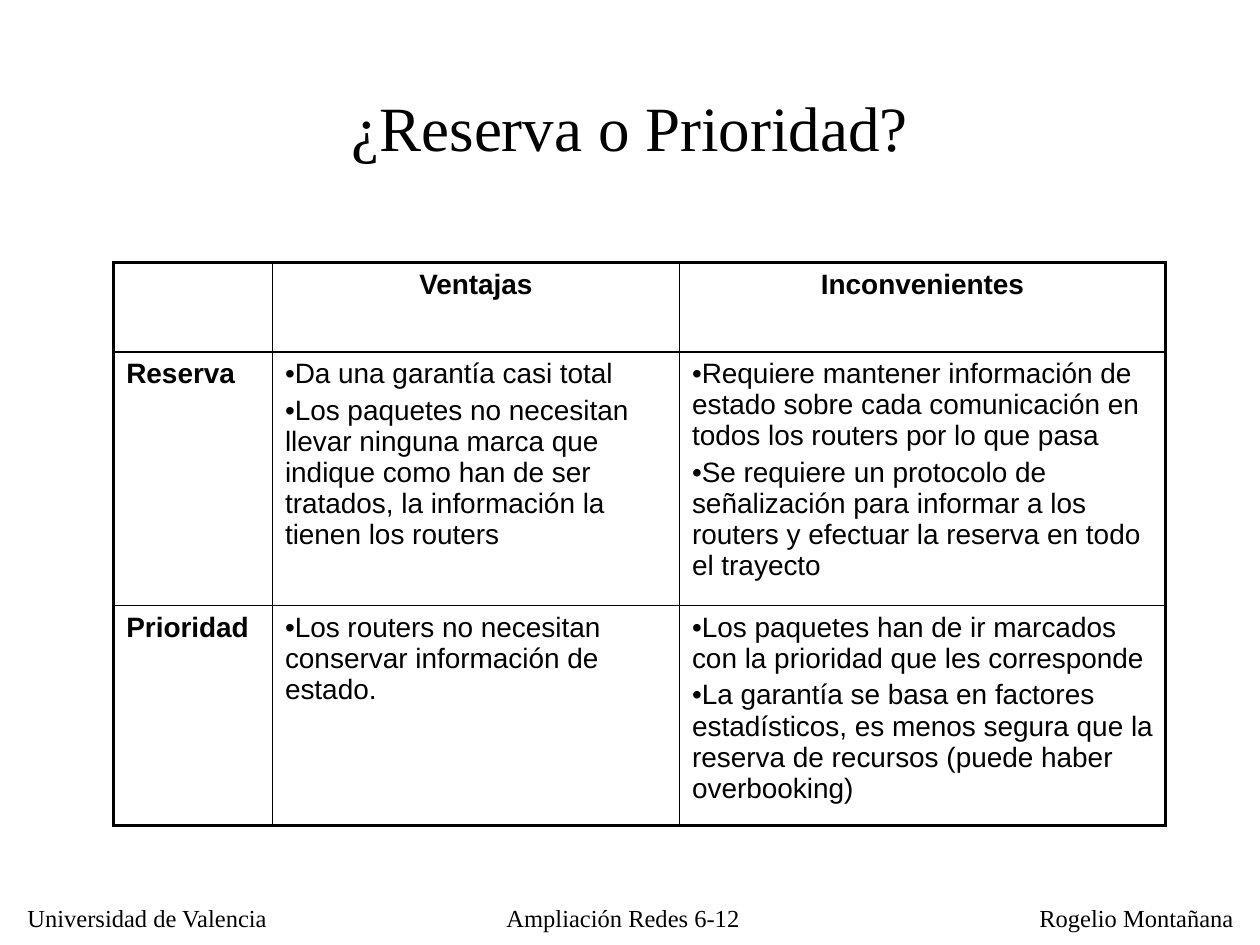
from dataclasses import dataclass

from lxml import etree
from pptx import Presentation
from pptx import util as u
from pptx.dml.color import RGBColor
from pptx.enum import text as t
from pptx.oxml import ns

COLORS = {"ink": "000000", "paper": "FFFFFF"}
SERIF, SANS = "Times New Roman", "Arial"
THICK, THIN = 2.25, 1
COLUMN_WIDTHS = (90.7, 232.6, 277.9)
ROW_HEIGHTS = (51.1, 145, 125.7)


@dataclass
class Label:
    words: str
    left: float
    top: float
    width: float
    height: float
    size: float = 14
    align: t.PP_ALIGN = t.PP_ALIGN.LEFT
    anchor: t.MSO_ANCHOR = t.MSO_ANCHOR.TOP
    wrap: bool = True


@dataclass
class Entry:
    paragraphs: tuple[str, ...] = ("",)
    bold: bool = False
    bullets: bool = False
    align: t.PP_ALIGN = t.PP_ALIGN.LEFT


LABELS = (
    Label("Universidad de Valencia", 8.6, 512.6, 153.4, 24, wrap=False),
    Label("Rogelio Montañana", 586.8, 512.6, 125.3, 24, wrap=False),
    Label("Ampliación Redes 6-12", 247, 512.6, 218, 27.4, align=t.PP_ALIGN.CENTER),
    Label("¿Reserva o Prioridad?", 54, 48.2, 612, 48.2, 36,
          t.PP_ALIGN.CENTER, t.MSO_ANCHOR.MIDDLE),
)


def heading(words: str) -> Entry:
    return Entry((words,), bold=True, align=t.PP_ALIGN.CENTER)


def option(words: str) -> Entry:
    return Entry((words,), bold=True)


def points(*paragraphs: str) -> Entry:
    return Entry(paragraphs, bullets=True)


COMPARISON = (
    (Entry(), heading("Ventajas"), heading("Inconvenientes")),
    (
        option("Reserva"),
        points("Da una garantía casi total",
               "Los paquetes no necesitan llevar ninguna marca que indique como han "
               "de ser tratados, la información la tienen los routers"),
        points("Requiere mantener información de estado sobre cada comunicación en "
               "todos los routers por lo que pasa",
               "Se requiere un protocolo de señalización para informar a los routers "
               "y efectuar la reserva en todo el trayecto"),
    ),
    (
        option("Prioridad"),
        points("Los routers no necesitan conservar información de estado."),
        points("Los paquetes han de ir marcados con la prioridad que les corresponde",
               "La garantía se basa en factores estadísticos, es menos segura que la "
               "reserva de recursos (puede haber overbooking)"),
    ),
)


def apply_format(target, values: dict) -> None:
    for name, value in values.items():
        setattr(target, name, value)


def style_font(font, name: str, size: float, bold: bool = False) -> None:
    apply_format(font, {"name": name, "size": u.Pt(size), "bold": bold})
    font.color.rgb = RGBColor.from_string(COLORS["ink"])


def draw_label(slide, label: Label) -> None:
    box = slide.shapes.add_textbox(
        *map(u.Pt, (label.left, label.top, label.width, label.height)))
    apply_format(box.text_frame,
                 {"word_wrap": label.wrap, "vertical_anchor": label.anchor})
    line = box.text_frame.paragraphs[0]
    line.alignment = label.align
    run = line.add_run()
    run.text = label.words
    style_font(run.font, SERIF, label.size)


def add_bullet(paragraph) -> None:
    properties = paragraph._p.get_or_add_pPr()
    apply_indent = {"marL": "0", "indent": "0"}
    for name, value in apply_indent.items():
        properties.set(name, value)
    etree.SubElement(properties, ns.qn("a:buFont"), typeface=SANS)
    etree.SubElement(properties, ns.qn("a:buChar"), char="•")


def fill_cell(cell, entry: Entry) -> None:
    cell.fill.background()
    for index, words in enumerate(entry.paragraphs):
        frame = cell.text_frame
        paragraph = frame.add_paragraph() if index else frame.paragraphs[0]
        apply_format(paragraph, {"alignment": entry.align, "space_before": u.Pt(3.2)})
        if entry.bullets:
            add_bullet(paragraph)
        if words:
            run = paragraph.add_run()
            run.text = words
            style_font(run.font, SANS, 16, entry.bold)


def draw_borders(cell, widths: dict[str, float]) -> None:
    """Put the side lines before the fill, in the order the schema asks for."""
    properties = cell._tc.get_or_add_tcPr()
    for position, side in enumerate("LRTB"):
        border = etree.Element(ns.qn(f"a:ln{side}"), w=str(u.Pt(widths[side])))
        fill = etree.SubElement(border, ns.qn("a:solidFill"))
        etree.SubElement(fill, ns.qn("a:srgbClr"), val=COLORS["ink"])
        properties.insert(position, border)


def draw_comparison(slide) -> None:
    rows, columns = len(ROW_HEIGHTS), len(COLUMN_WIDTHS)
    table = slide.shapes.add_table(
        rows, columns, u.Pt(65), u.Pt(150),
        u.Pt(sum(COLUMN_WIDTHS)), u.Pt(sum(ROW_HEIGHTS))).table
    apply_format(table, {"first_row": False, "horz_banding": False})
    for column, width in zip(table.columns, COLUMN_WIDTHS):
        column.width = u.Pt(width)
    for row, height in zip(table.rows, ROW_HEIGHTS):
        row.height = u.Pt(height)
    for r, entries in enumerate(COMPARISON):
        for c, entry in enumerate(entries):
            cell = table.cell(r, c)
            fill_cell(cell, entry)
            outer = {"L": c == 0, "R": c == columns - 1,
                     "T": r == 0, "B": r == rows - 1}
            draw_borders(cell, {side: THICK if edge else THIN
                                for side, edge in outer.items()})


def main() -> None:
    deck = Presentation()
    apply_format(deck, {"slide_width": u.Pt(720), "slide_height": u.Pt(540)})
    slide = deck.slides.add_slide(deck.slide_layouts[6])
    background = slide.background.fill
    background.solid()
    background.fore_color.rgb = RGBColor.from_string(COLORS["paper"])
    for label in LABELS:
        draw_label(slide, label)
    draw_comparison(slide)
    deck.save("out.pptx")


if __name__ == "__main__":
    main()
